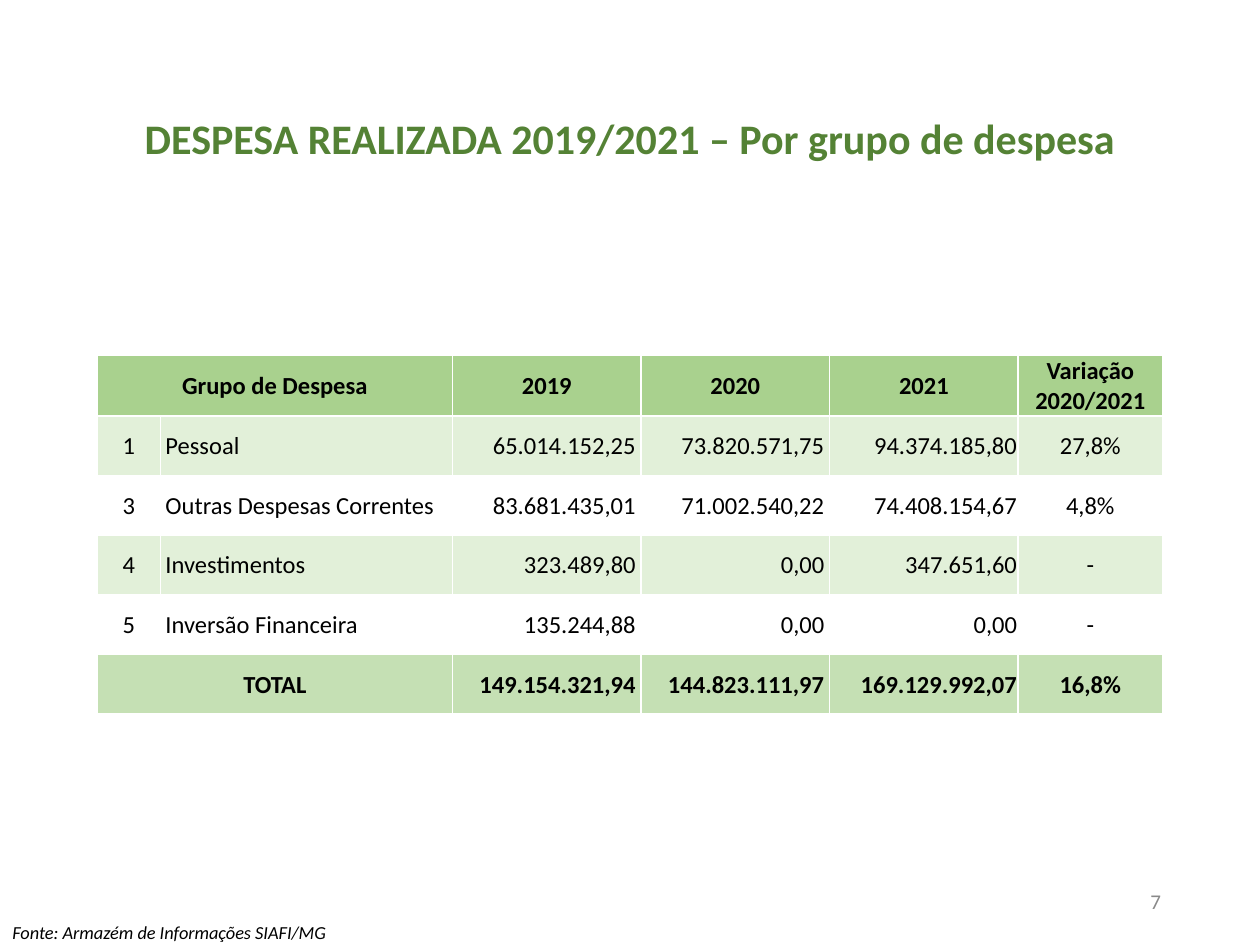
from dataclasses import dataclass

from lxml.etree import SubElement
from pptx import Presentation
from pptx.dml.color import RGBColor
from pptx.enum.text import MSO_ANCHOR as Anchor, MSO_AUTO_SIZE as AutoSize, PP_ALIGN as Align
from pptx.oxml.ns import qn
from pptx.util import Pt

FONT = "Calibri"
BLACK, WHITE = "000000", "FFFFFF"
HEADER_FILL, BAND_FILL, TOTAL_FILL = "A9D18E", "E2F0D9", "C5E0B4"
ROW_HEIGHT = 34.05


@dataclass
class Column:
    width: float
    align: Align
    left: float = 0.6
    right: float = 0.6


@dataclass
class Row:
    texts: list[str]
    fill: str
    bold: bool = False
    header: bool = False


COLUMNS = [
    Column(36, Align.CENTER),
    Column(167, Align.LEFT, left=3),
    Column(107.75, Align.RIGHT, right=3),
    Column(107.75, Align.RIGHT, right=3),
    Column(107.75, Align.RIGHT),
    Column(82.5, Align.CENTER),
]

ROWS = [
    Row(["Grupo de Despesa", "", "2019", "2020", "2021", "Variação 2020/2021"],
        HEADER_FILL, bold=True, header=True),
    Row(["1", "Pessoal", "65.014.152,25", "73.820.571,75", "94.374.185,80", "27,8%"], BAND_FILL),
    Row(["3", "Outras Despesas Correntes", "83.681.435,01", "71.002.540,22", "74.408.154,67",
         "4,8%"], WHITE),
    Row(["4", "Investimentos", "323.489,80", "0,00", "347.651,60", "-"], BAND_FILL),
    Row(["5", "Inversão Financeira", "135.244,88", "0,00", "0,00", "-"], WHITE),
    Row(["TOTAL", "", "149.154.321,94", "144.823.111,97", "169.129.992,07", "16,8%"],
        TOTAL_FILL, bold=True),
]


def color(value: str) -> RGBColor:
    return RGBColor.from_string(value)


def style(para, size: float, hex_color: str, align: Align, bold=False, italic=False) -> None:
    para.alignment = align
    font = para.font
    font.name, font.size, font.bold, font.italic = FONT, Pt(size), bold, italic
    font.color.rgb = color(hex_color)


def place(shape, left: float, top: float, width: float, height: float) -> None:
    shape.left, shape.top, shape.width, shape.height = map(Pt, (left, top, width, height))


def add_label(page, text: str, frame: tuple, size: float, hex_color: str, align: Align,
              italic=False) -> None:
    box = page.shapes.add_textbox(*map(Pt, frame))
    box.text_frame.word_wrap = True
    box.text_frame.vertical_anchor = Anchor.MIDDLE
    box.text_frame.text = text
    style(box.text_frame.paragraphs[0], size, hex_color, align, italic=italic)


def add_borders(cell, hex_color: str, width: float) -> None:
    """Line all four sides; call before the fill, which must follow in the XML."""
    properties = cell._tc.get_or_add_tcPr()
    for side in ("lnL", "lnR", "lnT", "lnB"):
        line = SubElement(properties, qn(f"a:{side}"), w=str(Pt(width)))
        fill = SubElement(line, qn("a:solidFill"))
        SubElement(fill, qn("a:srgbClr"), val=hex_color)


def fill_cell(cell, text: str, row: Row, column: Column) -> None:
    add_borders(cell, WHITE, 1)
    cell.fill.solid()
    cell.fill.fore_color.rgb = color(row.fill)
    cell.vertical_anchor = Anchor.MIDDLE
    centered = row.header or cell.is_merge_origin
    cell.margin_left = Pt(0.6 if centered else column.left)
    cell.margin_right = Pt(0.6 if centered else column.right)
    cell.margin_top, cell.margin_bottom = Pt(0.6), Pt(0)
    cell.text = text
    style(cell.text_frame.paragraphs[0], 14, BLACK,
          Align.CENTER if centered else column.align, bold=row.bold)


def add_expense_table(page, left: float, top: float) -> None:
    width = sum(column.width for column in COLUMNS)
    table = page.shapes.add_table(len(ROWS), len(COLUMNS), Pt(left), Pt(top), Pt(width),
                                  Pt(ROW_HEIGHT * len(ROWS))).table
    for index, column in enumerate(COLUMNS):
        table.columns[index].width = Pt(column.width)
    for r, row in enumerate(ROWS):
        table.rows[r].height = Pt(ROW_HEIGHT)
        if not row.texts[1]:
            table.cell(r, 0).merge(table.cell(r, 1))
        for c, (text, column) in enumerate(zip(row.texts, COLUMNS)):
            fill_cell(table.cell(r, c), text, row, column)


def main() -> None:
    deck = Presentation()
    deck.slide_width, deck.slide_height = Pt(720), Pt(540)
    page = deck.slides.add_slide(deck.slide_layouts[5])

    title = page.shapes.title
    place(title, 36, 52, 648, 57)
    title.text_frame.auto_size = AutoSize.NONE
    title.text_frame.vertical_anchor = Anchor.MIDDLE
    title.text_frame.text = "DESPESA REALIZADA 2019/2021 – Por grupo de despesa"
    heading = title.text_frame.paragraphs[0]
    heading.line_spacing = 0.9
    style(heading, 24, "548235", Align.CENTER, bold=True)

    add_expense_table(page, 55.6, 203)
    add_label(page, "7", (508.5, 500.5, 162, 28.75), 12, "898989", Align.RIGHT)
    add_label(page, "Fonte: Armazém de Informações SIAFI/MG", (0, 525.6, 572.4, 14.4),
              10.5, BLACK, Align.LEFT, italic=True)
    deck.save("out.pptx")


if __name__ == "__main__":
    main()
